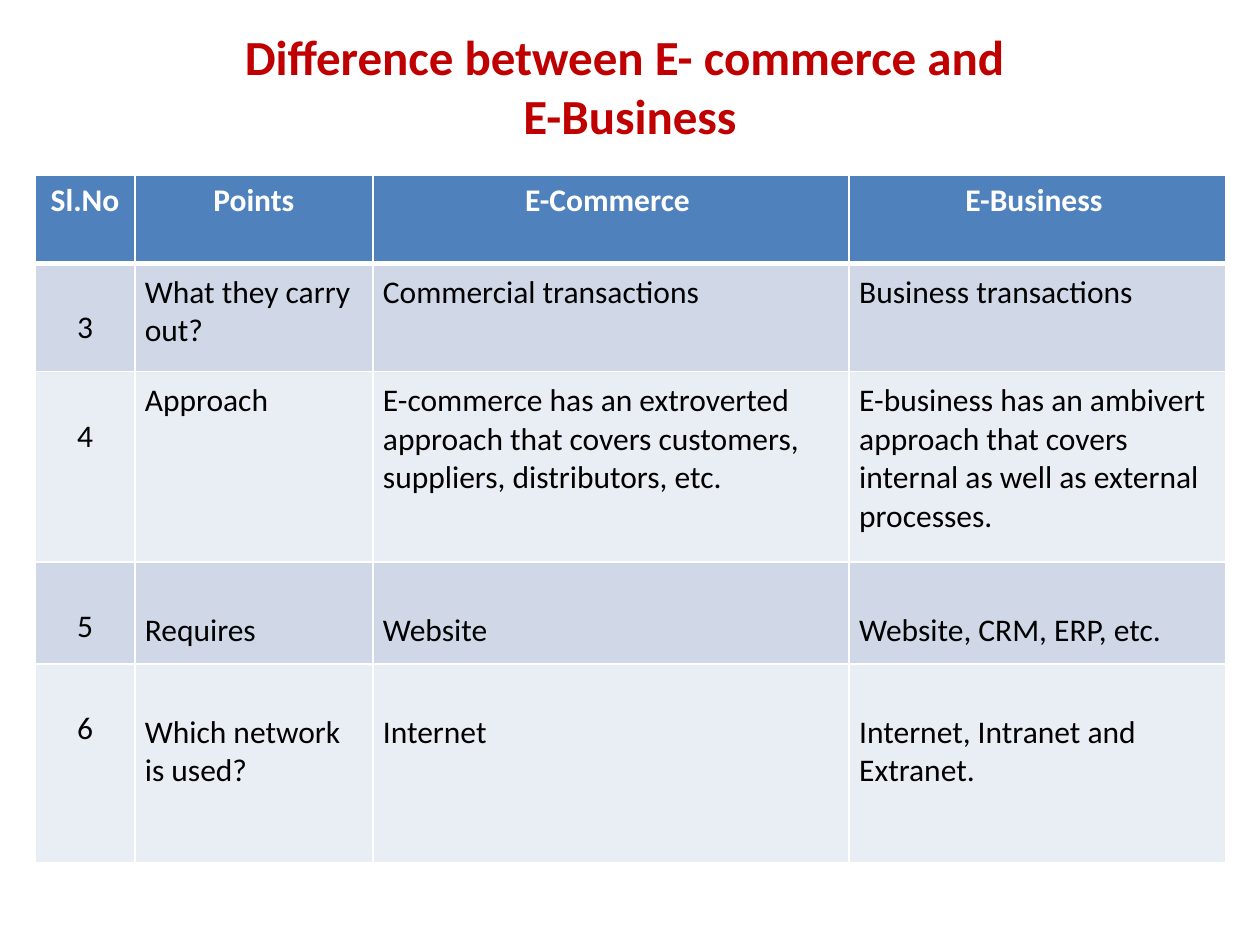
import pptx
import pptx.util
import pptx.dml.color
import pptx.enum.text
import pptx.oxml
import pptx.oxml.ns

TITLE = ("Difference between E- commerce and ", "E-Business")
ROWS = [
    ("Sl.No", "Points", "E-Commerce ", "E-Business "),
    ("3", "What they carry out?", "Commercial transactions", "Business transactions"),
    ("4", "Approach",
     "E-commerce has an extroverted approach that covers customers, suppliers, distributors, etc.",
     "E-business has an ambivert approach that covers internal as well as external processes."),
    ("5", "Requires", "Website", "Website, CRM, ERP, etc."),
    ("6", "Which network is used?", "Internet", "Internet, Intranet and Extranet."),
]
WIDTHS = (0.79, 1.89, 3.78, 2.99)
HEIGHTS = (0.7, 0.86, 1.51, 0.81, 1.58)
LOW_ROWS = (3, 4)
LINE = 0.31
COLORS = {"title": "C00000", "head": "4F81BD", "odd": "D0D8E8",
          "even": "E9EDF4", "edge": "FFFFFF", "light": "FFFFFF", "dark": "000000"}
FONTS = {
    "title": {"name": "Calibri", "size": pptx.util.Pt(28), "bold": True},
    "head": {"name": "Calibri", "size": pptx.util.Pt(18), "bold": True},
    "body": {"name": "Calibri", "size": pptx.util.Pt(18), "bold": False},
}
ALIGN = pptx.enum.text.PP_ALIGN
Inches = pptx.util.Inches


def shade(name):
    return pptx.dml.color.RGBColor.from_string(COLORS[name])


def write(para, text, font, color, align):
    para.alignment = align
    run = para.add_run()
    run.text = text
    for key, value in FONTS[font].items():
        setattr(run.font, key, value)
    run.font.color.rgb = shade(color)


def edge(cell, widths):
    props = cell._tc.get_or_add_tcPr()
    for side, width in widths.items():
        props.append(pptx.oxml.parse_xml(
            f'<a:ln{side} {pptx.oxml.ns.nsdecls("a")} w="{pptx.util.Pt(width)}">'
            f'<a:solidFill><a:srgbClr val="{COLORS["edge"]}"/></a:solidFill></a:ln{side}>'))


def style(cell, row, col, text):
    head, first = row == 0, col == 0
    pad = 0.05 if head or first else 0.08
    drop = not head and (first or row in LOW_ROWS)
    side = 0.1 if head or first else 0.08
    margins = {"margin_left": side, "margin_right": side,
               "margin_top": pad + LINE * drop, "margin_bottom": pad}
    for key, value in margins.items():
        setattr(cell, key, Inches(value))
    edge(cell, {"L": 1, "R": 1, "T": 3 if row == 1 else 1, "B": 3 if head else 1})
    cell.fill.solid()
    cell.fill.fore_color.rgb = shade("head" if head else "odd" if row % 2 else "even")
    write(cell.text_frame.paragraphs[0], text, "head" if head else "body",
          "light" if head else "dark", ALIGN.CENTER if head or first else ALIGN.LEFT)


def main():
    deck = pptx.Presentation()
    deck.slide_width, deck.slide_height = Inches(10), Inches(7.5)
    slide = deck.slides.add_slide(deck.slide_layouts[6])

    box = slide.shapes.add_textbox(*map(Inches, (0.5, 0.13, 9, 1.1)))
    frame = box.text_frame
    frame.word_wrap = True
    frame.vertical_anchor = pptx.enum.text.MSO_ANCHOR.MIDDLE
    para = frame.paragraphs[0]
    for num, line in enumerate(TITLE):
        if num:
            para.add_line_break()
        write(para, line, "title", "title", ALIGN.CENTER)

    area = (0.28, 1.39, sum(WIDTHS), sum(HEIGHTS))
    table = slide.shapes.add_table(len(HEIGHTS), len(WIDTHS), *map(Inches, area)).table
    for col, width in zip(table.columns, WIDTHS):
        col.width = Inches(width)
    for row, height in zip(table.rows, HEIGHTS):
        row.height = Inches(height)
    for row, texts in enumerate(ROWS):
        for col, text in enumerate(texts):
            style(table.cell(row, col), row, col, text)

    deck.save("out.pptx")


if __name__ == "__main__":
    main()
